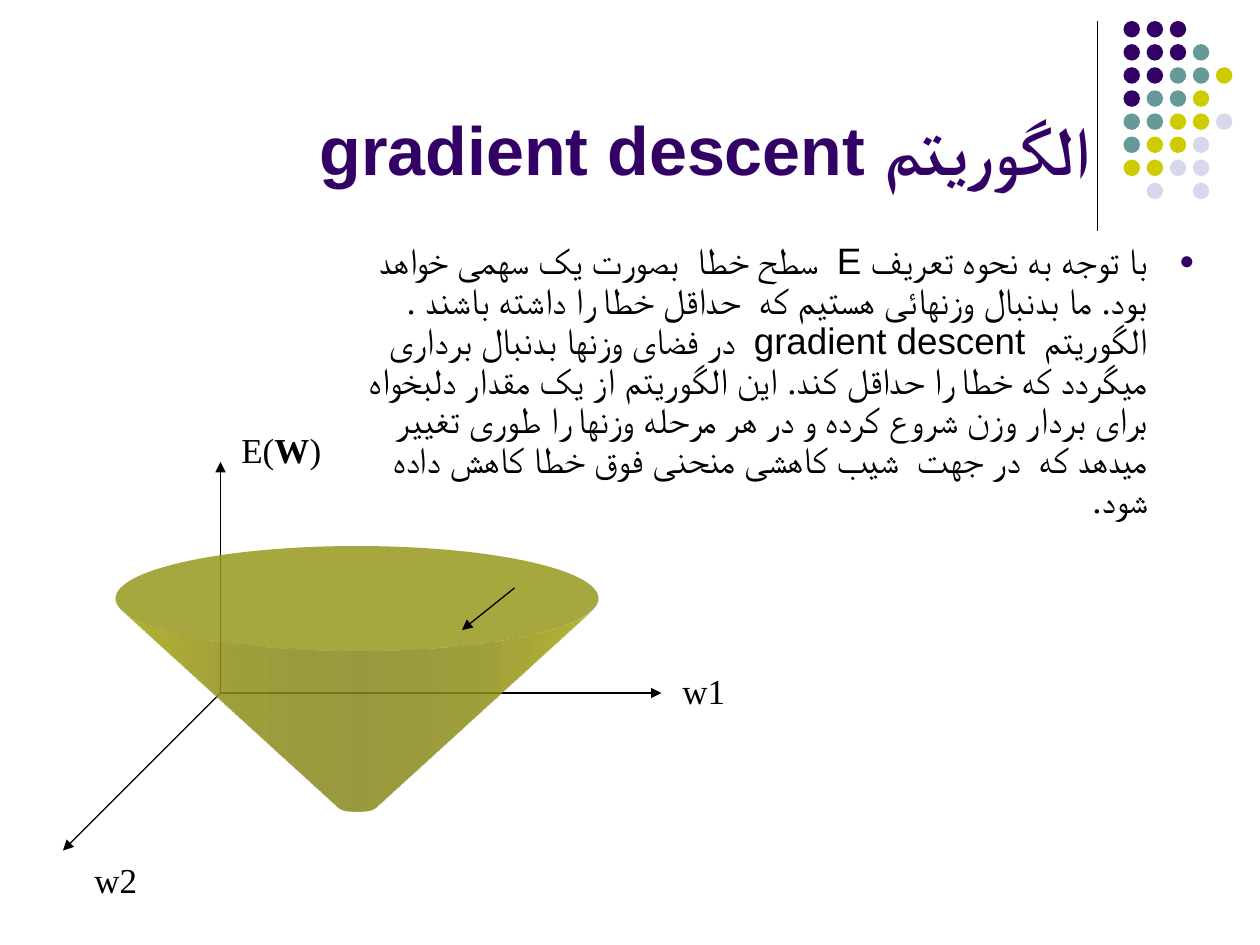
from dataclasses import dataclass
from math import cos, sin, radians

from lxml.etree import SubElement
from pptx import Presentation
from pptx.dml.color import RGBColor
from pptx.enum.shapes import MSO_CONNECTOR as Connector, MSO_SHAPE as Shape
from pptx.enum.text import MSO_ANCHOR as Anchor, MSO_AUTO_SIZE as AutoSize, PP_ALIGN as Align
from pptx.oxml.ns import qn
from pptx.util import Emu, Pt


@dataclass(frozen=True)
class Theme:
    purple: str = "330066"
    teal: str = "669999"
    lime: str = "CCCC00"
    lilac: str = "D8D8EC"
    ink: str = "000000"
    rim: str = "98981E"
    edge: str = "A8A810"
    middle: str = "8E8E1C"
    core: str = "88881E"
    opacity: int = 85
    sans: str = "Arial"
    serif: str = "Times New Roman"
    title_size: int = 39
    body_size: int = 21
    label_size: int = 20
    line_width: float = 0.75


THEME = Theme()
SCALE = 914400 / 126

TITLE = "الگوریتم gradient descent"
BODY = (
    "با توجه به نحوه تعریف E  سطح خطا  بصورت یک سهمی خواهد بود. "
    "ما بدنبال وزنهائی هستیم که  حداقل خطا را داشته باشند . "
    "الگوریتم  gradient descent  در فضای وزنها بدنبال برداری میگردد که خطا را حداقل کند. "
    "این الگوریتم از یک مقدار دلبخواه برای بردار وزن شروع کرده و در هر مرحله "
    "وزنها را طوری تغییر میدهد که  در جهت  شیب کاهشی منحنی فوق خطا کاهش داده شود."
)
TITLE_BOX = (63, 16, 1040, 179)
BODY_BOX = (347, 237, 860, 299)

DOT_ROWS = ["PPP", "PPPT", "PPTTL", "PTTL", "TTLLV", "TLLV", "LLVV", " V V"]
DOT_COLOURS = {"P": THEME.purple, "T": THEME.teal, "L": THEME.lime, "V": THEME.lilac}
DOT_LEFT, DOT_TOP, DOT_SIZE, DOT_PITCH = 1123.5, 21, 16.5, 23.1

DIVIDER = ((1097.5, 21), (1097.5, 231))
ORIGIN = (220.5, 693)
AXIS_ENDS = [(661.5, 693), (63, 850.5), (220.5, 462)]
DESCENT = ((514.5, 588), (462, 630))
LABELS = [
    ((670, 663, 68, 54), [("w1", False)]),
    ((82, 852, 68, 54), [("w2", False)]),
    ((229, 422, 105, 54), [("E(", False), ("W", True), (")", False)]),
]
RIM_BOX = (115.5, 546, 483, 105)
RIM = (357, 598.5, 241.5, 52.5)
TIP = (357, 807, 19, 5)


def px(value):
    return Emu(round(value * SCALE))


def area(box):
    return [px(value) for value in box]


def colour(code):
    return RGBColor.from_string(code)


def add_span(para, text, font, size, code, bold=False, script_font=None):
    span = para.add_run()
    span.text = text
    span.font.name, span.font.size, span.font.bold = font, Pt(size), bold
    span.font.color.rgb = colour(code)
    SubElement(span.font._element, qn("a:cs"), typeface=script_font or font)


def set_rtl(para):
    para.alignment = Align.RIGHT
    props = para._p.get_or_add_pPr()
    props.set("rtl", "1")
    return props


def add_line(page, start, end, arrow=False):
    line = page.shapes.add_connector(Connector.STRAIGHT, *area(start + end))
    line.line.color.rgb = colour(THEME.ink)
    line.line.width = Pt(THEME.line_width)
    if arrow:
        SubElement(line.line._get_or_add_ln(), qn("a:tailEnd"), type="triangle")
    SubElement(line._element.spPr, qn("a:effectLst"))


def plain(shape, code):
    shape.shadow.inherit = False
    shape.fill.solid()
    shape.fill.fore_color.rgb = colour(code)
    shape.line.fill.background()


def make_translucent(shape):
    for tone in shape._element.spPr.iter(qn("a:srgbClr")):
        SubElement(tone, qn("a:alpha"), val=str(THEME.opacity * 1000))


def shade_across(shape, codes):
    shape.fill.gradient()
    shape.fill.gradient_angle = 0
    stops = shape._element.spPr.find(qn("a:gradFill")).find(qn("a:gsLst"))
    for stop in list(stops):
        stops.remove(stop)
    for index, code in enumerate(codes):
        position = round(100000 * index / (len(codes) - 1))
        stop = SubElement(stops, qn("a:gs"), pos=str(position))
        SubElement(stop, qn("a:srgbClr"), val=code)


def arc(ellipse, first, last, step):
    x, y, wide, high = ellipse
    return [(x + wide * cos(radians(angle)), y + high * sin(radians(angle)))
            for angle in range(first, last + step, step)]


def add_dots(page):
    for row, codes in enumerate(DOT_ROWS):
        for column, code in enumerate(codes):
            if code in DOT_COLOURS:
                box = (DOT_LEFT + column * DOT_PITCH, DOT_TOP + row * DOT_PITCH, DOT_SIZE, DOT_SIZE)
                plain(page.shapes.add_shape(Shape.OVAL, *area(box)), DOT_COLOURS[code])


def add_title(page):
    title = page.shapes.title
    title.left, title.top, title.width, title.height = area(TITLE_BOX)
    frame = title.text_frame
    frame.auto_size, frame.vertical_anchor = AutoSize.NONE, Anchor.BOTTOM
    para = frame.paragraphs[0]
    set_rtl(para)
    add_span(para, TITLE, THEME.sans, THEME.title_size, THEME.purple, True)


def add_body(page):
    frame = page.shapes.add_textbox(*area(BODY_BOX)).text_frame
    frame.word_wrap = True
    para = frame.paragraphs[0]
    para.line_spacing, para.space_before = 0.9, Pt(4)
    props = set_rtl(para)
    props.set("marL", str(px(47)))
    props.set("indent", str(-px(47)))
    SubElement(SubElement(props, qn("a:buClr")), qn("a:srgbClr"), val=THEME.purple)
    SubElement(props, qn("a:buSzPct"), val="70000")
    SubElement(props, qn("a:buFont"), typeface=THEME.sans)
    SubElement(props, qn("a:buChar"), char="●")
    add_span(para, BODY, THEME.sans, THEME.body_size, THEME.ink, script_font=THEME.serif)


def add_cone(page):
    outline = arc(RIM, 12, 168, 4) + arc(TIP, 20, 160, 20)[::-1]
    start, *rest = [tuple(area(point)) for point in outline]
    builder = page.shapes.build_freeform(*start)
    builder.add_line_segments(rest, close=True)
    side = builder.convert_to_shape()
    plain(side, THEME.core)
    shade_across(side, [THEME.edge, THEME.middle, THEME.core, THEME.middle, THEME.edge])
    make_translucent(side)
    rim = page.shapes.add_shape(Shape.OVAL, *area(RIM_BOX))
    plain(rim, THEME.rim)
    make_translucent(rim)


def add_label(page, box, spans):
    frame = page.shapes.add_textbox(*area(box)).text_frame
    frame.word_wrap, frame.auto_size = False, AutoSize.SHAPE_TO_FIT_TEXT
    for text, bold in spans:
        add_span(frame.paragraphs[0], text, THEME.serif, THEME.label_size, THEME.ink, bold)


def main():
    deck = Presentation()
    deck.slide_width, deck.slide_height = px(1260), px(945)
    page = deck.slides.add_slide(deck.slide_layouts[5])
    add_line(page, *DIVIDER)
    add_dots(page)
    add_title(page)
    add_body(page)
    for end in AXIS_ENDS:
        add_line(page, ORIGIN, end, arrow=True)
    add_cone(page)
    for box, spans in LABELS:
        add_label(page, box, spans)
    add_line(page, *DESCENT, arrow=True)
    deck.save("out.pptx")


if __name__ == "__main__":
    main()
